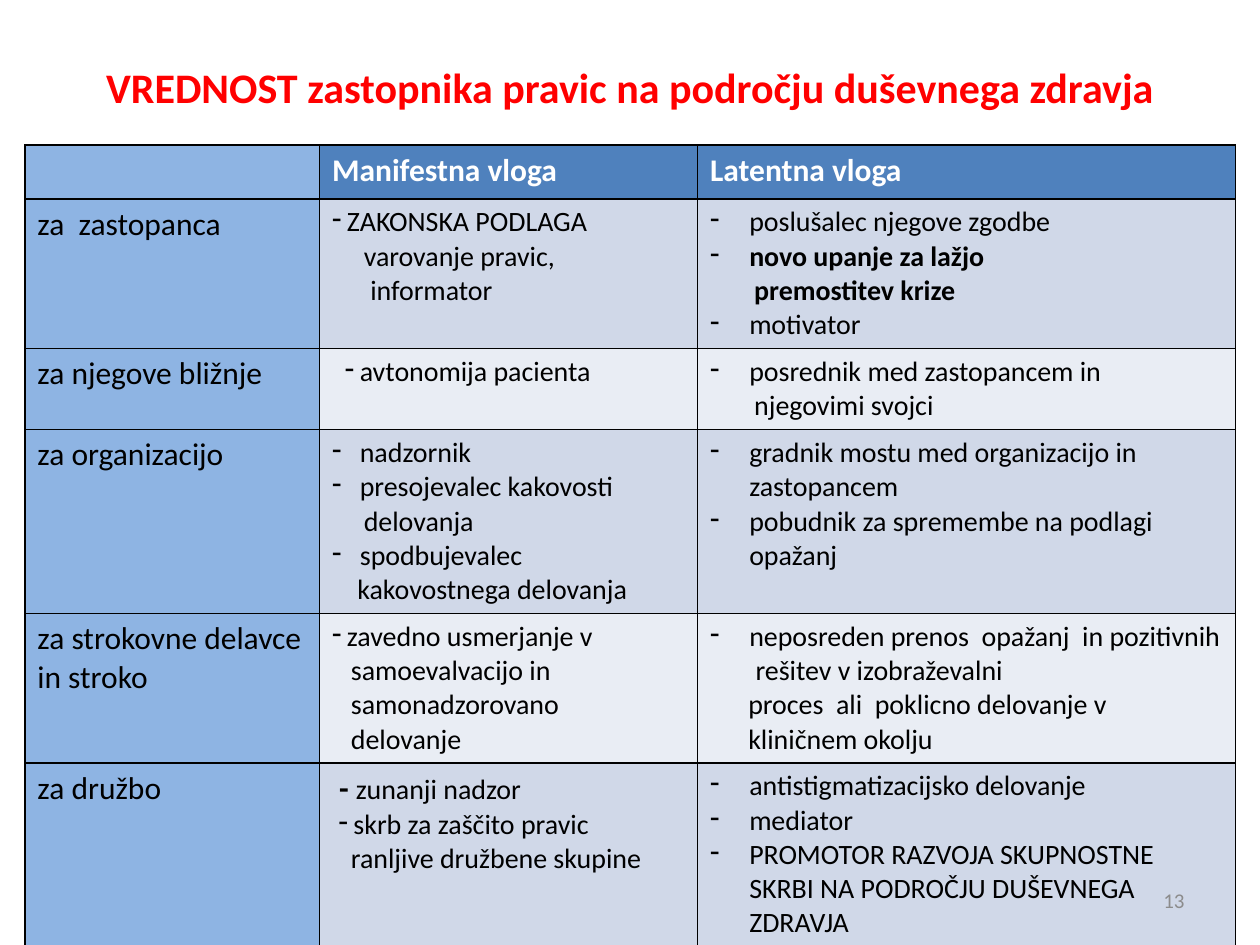
from lxml import etree
from pptx import Presentation
from pptx.dml.color import RGBColor
from pptx.enum.text import MSO_ANCHOR, PP_ALIGN
from pptx.oxml import parse_xml
from pptx.oxml.ns import nsdecls, qn
from pptx.util import Cm, Pt

RED = RGBColor(0xFF, 0x00, 0x00)
BLACK = RGBColor(0x00, 0x00, 0x00)
WHITE = RGBColor(0xFF, 0xFF, 0xFF)
GREY = RGBColor(0x8C, 0x8C, 0x8C)
HEADER = RGBColor(0x4F, 0x81, 0xBD)
SIDE = RGBColor(0x8E, 0xB4, 0xE3)
BANDS = [RGBColor(0xD0, 0xD8, 0xE8), RGBColor(0xE9, 0xED, 0xF4)]
FONT = "Calibri"

# Each line is (text, left margin in cm, hanging dash indent in cm)
HANG = 0.79    # dash lists in the right column
WIDE = 0.56    # wide dash lists in the middle column
TIGHT = 0.3    # tight dash lists in the middle column
ROWS = [
    ("za  zastopanca",
     [("ZAKONSKA PODLAGA", TIGHT, TIGHT),
      ("varovanje pravic,", 0.64, 0),
      ("informator", 0.77, 0)],
     [("poslušalec njegove zgodbe", HANG, HANG),
      ("novo upanje za lažjo", HANG, HANG),
      ("premostitev krize", 0.89, 0),
      ("motivator", HANG, HANG)]),
    ("za njegove bližnje",
     [("avtonomija pacienta", 0.56, TIGHT)],
     [("posrednik med zastopancem in", HANG, HANG),
      ("njegovimi svojci", 0.89, 0)]),
    ("za organizacijo",
     [("nadzornik", WIDE, WIDE),
      ("presojevalec kakovosti", WIDE, WIDE),
      ("delovanja", 0.64, 0),
      ("spodbujevalec", WIDE, WIDE),
      ("kakovostnega delovanja", 0.51, 0)],
     [("gradnik mostu med organizacijo in zastopancem", HANG, HANG),
      ("pobudnik za spremembe na podlagi opažanj", HANG, HANG)]),
    ("za strokovne delavce in stroko",
     [("zavedno usmerjanje v", TIGHT, TIGHT),
      ("samoevalvacijo in", 0.38, 0),
      ("samonadzorovano", 0.38, 0),
      ("delovanje", 0.38, 0)],
     [("neposreden prenos  opažanj  in pozitivnih  rešitev v izobraževalni",
       HANG, HANG),
      ("proces  ali  poklicno delovanje v", 0.77, 0),
      ("kliničnem okolju", 0.77, 0)]),
    ("za družbo",
     [("zunanji nadzor", 0.14, 0),
      ("skrb za zaščito pravic", 0.43, TIGHT),
      ("ranljive družbene skupine", 0.38, 0)],
     [("antistigmatizacijsko delovanje", HANG, HANG),
      ("mediator", HANG, HANG),
      ("PROMOTOR RAZVOJA SKUPNOSTNE SKRBI NA PODROČJU DUŠEVNEGA ZDRAVJA",
       HANG, HANG)]),
]
BOLD_LINES = {"novo upanje za lažjo", "premostitev krize"}


def set_font(p, size, color, bold=False):
    p.font.name = FONT
    p.font.size = Pt(size)
    p.font.color.rgb = color
    p.font.bold = bold


def style_cell(cell, color):
    """Fill the cell and give it a thin black border on all sides."""
    cell.fill.solid()
    cell.fill.fore_color.rgb = color
    tcPr = cell._tc.get_or_add_tcPr()
    for i, side in enumerate("LRTB"):
        tcPr.insert(i, parse_xml(
            f'<a:ln{side} {nsdecls("a")} w="12700"><a:solidFill>'
            f'<a:srgbClr val="{BLACK}"/></a:solidFill></a:ln{side}>'))


prs = Presentation()
prs.slide_width, prs.slide_height = Cm(25.4), Cm(19.05)
s = prs.slides.add_slide(prs.slide_layouts[5])

# Title
title = s.shapes.title
title.left, title.top, title.width, title.height = (
    Cm(1.27), Cm(0.76), Cm(22.86), Cm(1.96))
tf = title.text_frame
tf.text = "VREDNOST zastopnika pravic na področju duševnega zdravja"
tf.vertical_anchor = MSO_ANCHOR.MIDDLE
tf.paragraphs[0].alignment = PP_ALIGN.CENTER
set_font(tf.paragraphs[0], 24, RED, True)

# Table grid
table = s.shapes.add_table(6, 3, Cm(0.5), Cm(2.92), Cm(24.41), Cm(15.58)).table
table.first_row = table.horz_banding = False
for col, width in zip(table.columns, [5.94, 7.62, 10.85]):
    col.width = Cm(width)
for row, height in zip(table.rows, [1.09, 2.9, 1.57, 3.56, 2.9, 3.56]):
    row.height = Cm(height)

# Header row
style_cell(table.cell(0, 0), SIDE)
for c, text in enumerate(["Manifestna vloga", "Latentna vloga"], 1):
    cell = table.cell(0, c)
    style_cell(cell, HEADER)
    cell.text = text
    set_font(cell.text_frame.paragraphs[0], 18, WHITE, True)

# Body rows
for r, (label, *columns) in enumerate(ROWS, 1):
    cell = table.cell(r, 0)
    style_cell(cell, SIDE)
    cell.text = label
    set_font(cell.text_frame.paragraphs[0], 18, BLACK)
    for c, lines in enumerate(columns, 1):
        cell = table.cell(r, c)
        style_cell(cell, BANDS[(r - 1) % 2])
        cell.text = "\n".join(text for text, _, _ in lines)
        for p, (text, left, hang) in zip(cell.text_frame.paragraphs, lines):
            set_font(p, 16, BLACK, text in BOLD_LINES)
            pPr = p._p.get_or_add_pPr()
            pPr.set("marL", str(Cm(left)))
            pPr.set("indent", str(-Cm(hang)))
            if hang:
                bullet = etree.Element(qn("a:buChar"), char="-")
                pPr.insert_element_before(bullet, "a:tabLst", "a:defRPr")

# Larger bold dash that opens the last middle cell
p = table.cell(5, 1).text_frame.paragraphs[0]
text = p.runs[0].text
p.runs[0].text = "- "
p.runs[0].font.size = Pt(18)
p.runs[0].font.bold = True
p.add_run().text = text

# Slide number
sp = s.shapes.add_textbox(Cm(18.2), Cm(17.65), Cm(5.93), Cm(1.01))
tf = sp.text_frame
tf.word_wrap = True
tf.vertical_anchor = MSO_ANCHOR.MIDDLE
tf.text = "13"
tf.paragraphs[0].alignment = PP_ALIGN.RIGHT
set_font(tf.paragraphs[0], 12, GREY)

prs.save("out.pptx")
